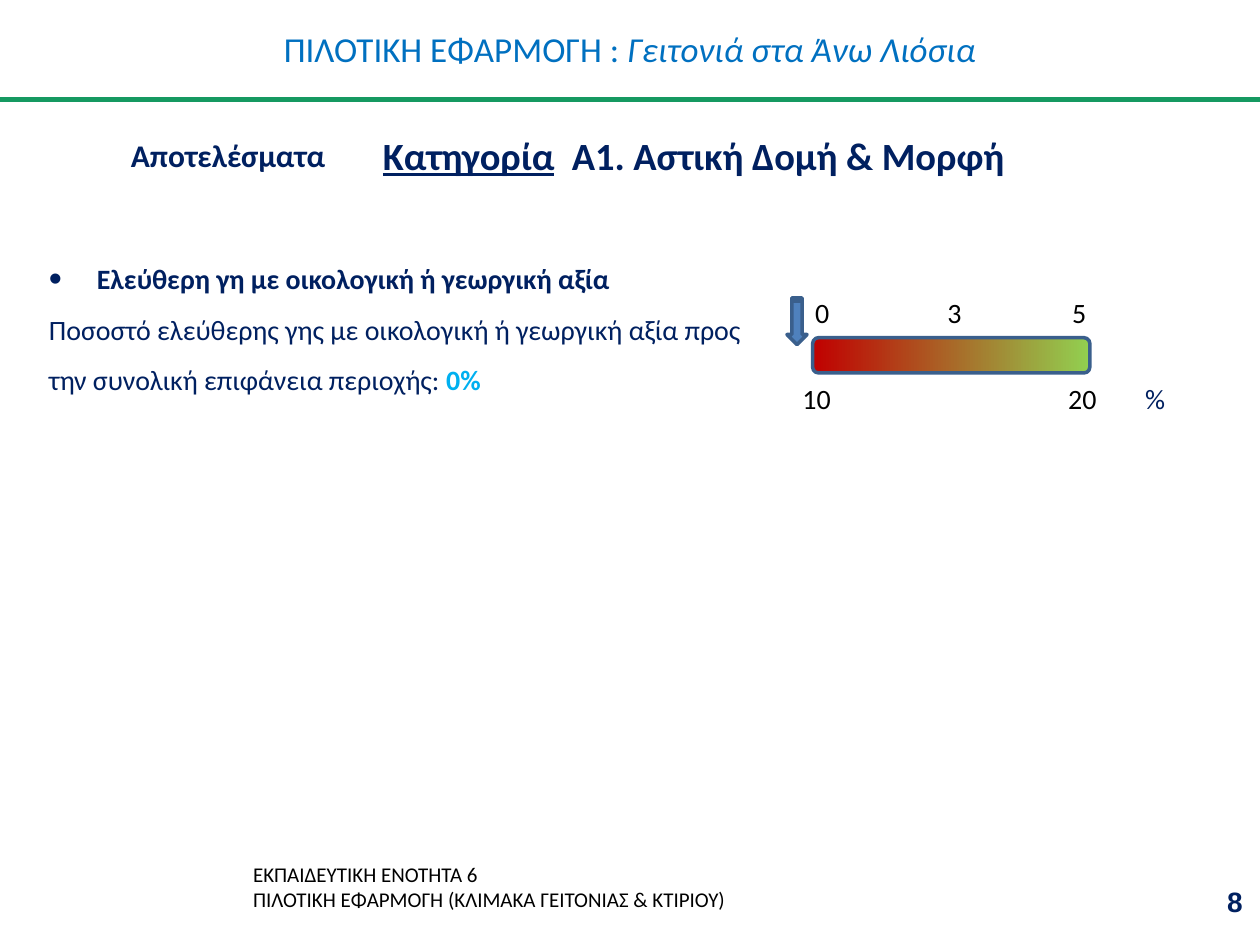
from dataclasses import dataclass

from lxml import etree
from pptx import Presentation
from pptx.dml.color import RGBColor
from pptx.enum.shapes import MSO_CONNECTOR, MSO_SHAPE
from pptx.enum.text import MSO_ANCHOR, PP_ALIGN
from pptx.oxml.ns import qn
from pptx.util import Inches, Pt

LINE = MSO_CONNECTOR.STRAIGHT
ROUND = MSO_SHAPE.ROUNDED_RECTANGLE
ARROW = MSO_SHAPE.STRIPED_RIGHT_ARROW
TOP, MID = MSO_ANCHOR.TOP, MSO_ANCHOR.MIDDLE
LEFT, MIDDLE, RIGHT = PP_ALIGN.LEFT, PP_ALIGN.CENTER, PP_ALIGN.RIGHT


@dataclass(frozen=True)
class Theme:
    font: str = "Calibri"
    digit: str = "Arial"
    navy: str = "002060"
    blue: str = "0070C0"
    sky: str = "00B0F0"
    black: str = "000000"
    green: str = "159961"
    edge: str = "3A5F8C"
    arrow: str = "4F81BD"
    low: str = "C00000"
    high: str = "92D050"
    small: int = 12
    body: int = 16
    label: int = 18
    title: int = 20
    head: int = 22


def rgb(code):
    return RGBColor.from_string(code)


def write(para, text, font, size, color, bold=False, italic=False, under=False):
    for i, part in enumerate(text.split("\n")):
        if i:
            para.add_line_break()
        run = para.add_run()
        run.text = part
        face = run.font
        face.name, face.size = font, Pt(size)
        face.bold, face.italic, face.underline = bold, italic, under
        face.color.rgb = rgb(color)


class Board:
    def __init__(self, slide, theme):
        self.slide, self.theme = slide, theme

    def text(self, box, *paras, anchor=TOP, align=LEFT, wrap=True, **style):
        shape = self.slide.shapes.add_textbox(*map(Inches, box))
        frame = shape.text_frame
        frame.word_wrap, frame.vertical_anchor = wrap, anchor
        base = dict(font=self.theme.font, size=self.theme.body, color=self.theme.navy)
        for i, runs in enumerate(paras):
            para = frame.add_paragraph() if i else frame.paragraphs[0]
            para.alignment = align
            for words, extra in runs:
                write(para, words, **{**base, **style, **extra})
        return frame.paragraphs

    def bullet(self, para, indent, scale):
        props = para._p.get_or_add_pPr()
        props.set("marL", str(Inches(indent)))
        props.set("indent", str(-Inches(indent)))
        etree.SubElement(props, qn("a:buSzPct")).set("val", str(scale * 1000))
        etree.SubElement(props, qn("a:buFont")).set("typeface", self.theme.digit)
        etree.SubElement(props, qn("a:buChar")).set("char", "•")

    def rule(self, y, width, color, weight):
        line = self.slide.shapes.add_connector(
            LINE, Inches(0), Inches(y), Inches(width), Inches(y))
        line.line.color.rgb, line.line.width = rgb(color), Pt(weight)
        etree.SubElement(line._element.spPr, qn("a:effectLst"))

    def shape(self, kind, box, *colors, turn=0):
        shape = self.slide.shapes.add_shape(kind, *map(Inches, box))
        shape.shadow.inherit = False
        shape.rotation = turn
        shape.line.color.rgb, shape.line.width = rgb(self.theme.edge), Pt(2)
        if len(colors) == 1:
            shape.fill.solid()
            shape.fill.fore_color.rgb = rgb(colors[0])
            return
        shape.fill.gradient()
        shape.fill.gradient_angle = 0
        for i, (stop, color) in enumerate(zip(shape.fill.gradient_stops, colors)):
            stop.position = i
            stop.color.rgb = rgb(color)


def main():
    deck = Presentation()
    deck.slide_width, deck.slide_height = Inches(10), Inches(7.5)
    look = Theme()
    board = Board(deck.slides.add_slide(deck.slide_layouts[6]), look)

    board.rule(0.79, 10, look.green, 3)
    board.text((1.91, 6.79, 6.79, 0.5),
               [("ΕΚΠΑΙΔΕΥΤΙΚΗ ΕΝΟΤΗΤΑ 6\nΠΙΛΟΤΙΚΗ ΕΦΑΡΜΟΓΗ (ΚΛΙΜΑΚΑ ΓΕΙΤΟΝΙΑΣ & ΚΤΙΡΙΟΥ)", {})],
               size=look.small, color=look.black)
    board.text((0, 0, 10, 0.77),
               [("ΠΙΛΟΤΙΚΗ ΕΦΑΡΜΟΓΗ : ", {}),
                ("Γειτονιά στα Άνω Λιόσια", {"italic": True})],
               anchor=MID, align=MIDDLE, size=look.title, color=look.blue)
    board.text((0.94, 1.03, 1.81, 0.4), [("Αποτελέσματα", {})],
               size=look.label, bold=True)

    first, *rest = board.text(
        (0.29, 2.03, 9.71, 1.18),
        [("Ελεύθερη γη με οικολογική ή γεωργική αξία", {"bold": True})],
        [("Ποσοστό ελεύθερης γης με οικολογική ή γεωργική αξία προς", {})],
        [("την συνολική επιφάνεια περιοχής: ", {}),
         ("0%", {"bold": True, "color": look.sky})])
    board.bullet(first, 0.38, 134)
    for para in rest:
        para.line_spacing = 1.5

    board.shape(ROUND, (6.45, 2.68, 2.2, 0.28), look.low, look.high)
    marks = [
        ("0", 6.37, 2.3, 0.32, look.black),
        ("3", 7.42, 2.3, 0.32, look.black),
        ("5", 8.41, 2.3, 0.32, look.black),
        ("10", 6.27, 2.98, 0.43, look.black),
        ("20", 8.38, 2.98, 0.43, look.black),
        ("%", 8.99, 2.98, 0.36, look.navy),
    ]
    for mark, x, y, width, color in marks:
        board.text((x, y, width, 0.37), [(mark, {})], wrap=False, color=color)
    board.shape(ARROW, (6.14, 2.47, 0.37, 0.16), look.arrow, turn=90)

    board.text((2.94, 1, 7.04, 0.47),
               [("Κατηγορία", {"under": True}), (" \tΑ1. Αστική Δομή & Μορφή", {})],
               size=look.head, bold=True)
    board.text((7.63, 6.95, 2.33, 0.4), [("8", {})],
               anchor=MID, align=RIGHT, font=look.digit, bold=True)
    deck.save("out.pptx")


if __name__ == "__main__":
    main()
